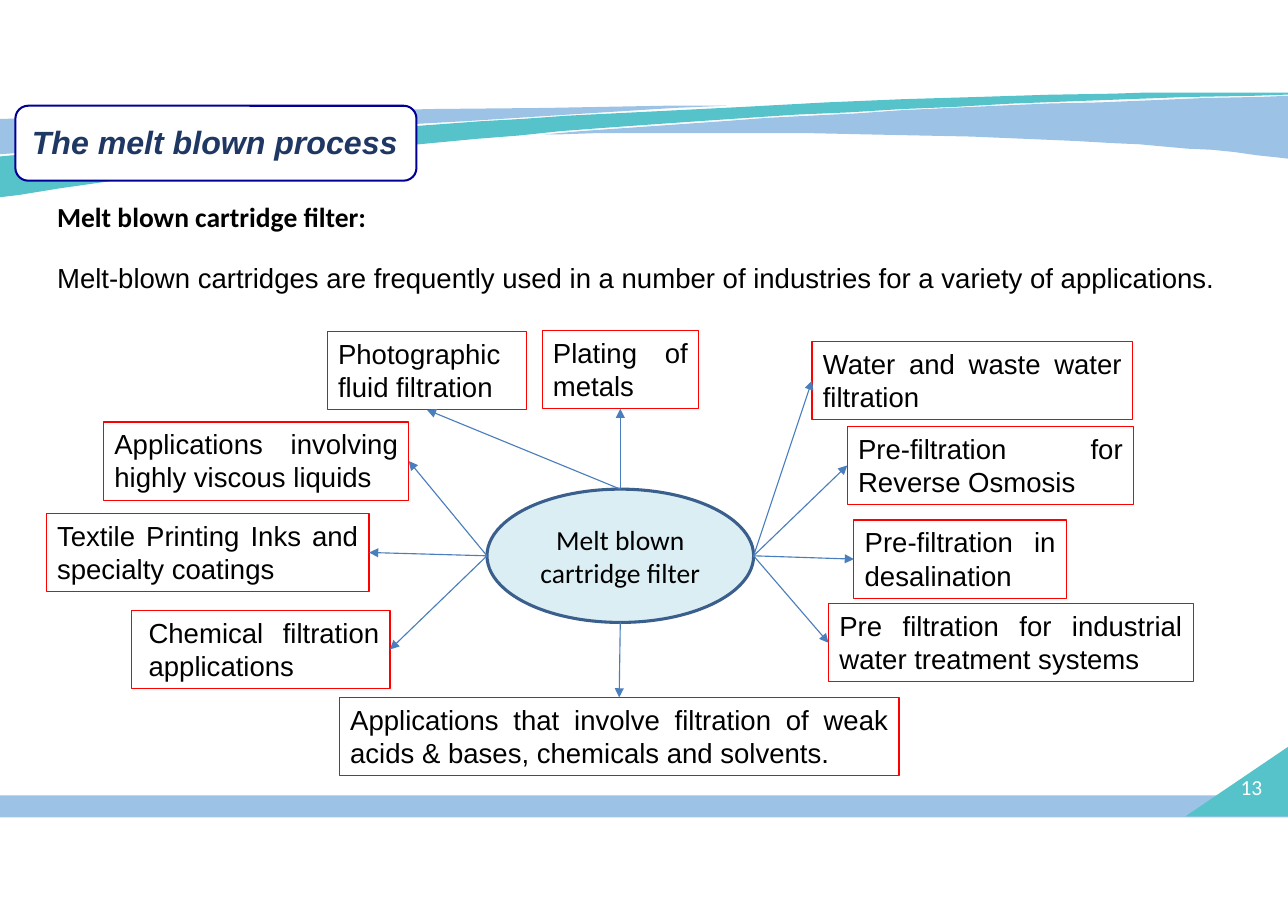
import pptx
import pptx.util
import pptx.dml.color
import pptx.enum.shapes
import pptx.enum.text
import pptx.oxml
import pptx.oxml.ns
import lxml.etree

Inches = pptx.util.Inches
Pt = pptx.util.Pt
RGBColor = pptx.dml.color.RGBColor
ShapeKind = pptx.enum.shapes.MSO_SHAPE
Align = pptx.enum.text.PP_ALIGN
Anchor = pptx.enum.text.MSO_ANCHOR

BLACK = RGBColor(0x00, 0x00, 0x00)
WHITE = RGBColor(0xFF, 0xFF, 0xFF)
RED = RGBColor(0xFF, 0x00, 0x00)
NAVY = RGBColor(0x1F, 0x37, 0x63)
BADGE_BLUE = RGBColor(0x00, 0x00, 0x94)
SKY = RGBColor(0x9C, 0xC3, 0xE6)
TEAL = RGBColor(0x56, 0xC3, 0xCA)
PALE_BLUE = RGBColor(0xDB, 0xEE, 0xF4)
HUB_LINE = RGBColor(0x3A, 0x5F, 0x8C)
ARROW_BLUE = RGBColor(0x4B, 0x7E, 0xBC)

# Connection sites of a rectangle
TOP, LEFT, BOTTOM, RIGHT = range(4)

LEFT_WAVE = [
    (6.6, 0.96), (6.04, 0.96), (4.96, 0.98), (3.94, 0.99), (2.99, 1.01), (2.12, 1.02),
    (1.36, 1.04), (0.42, 1.07), (0, 1.08), (0, 1.4), (0.29, 1.38), (0.93, 1.33),
    (1.67, 1.27), (2.47, 1.21), (3.33, 1.15), (4.23, 1.1), (5.17, 1.04), (6.12, 0.98)]
RIGHT_WAVE = [
    (11.69, 0.87), (11.44, 0.88), (10.94, 0.89), (10.46, 0.91), (9.98, 0.93),
    (9.52, 0.94), (9.06, 0.96), (8.62, 0.98), (8.19, 1), (7.77, 1.03), (7.36, 1.05),
    (6.96, 1.07), (6.57, 1.1), (6, 1.14), (5.28, 1.19), (4.94, 1.22), (5.08, 1.22),
    (5.38, 1.21), (6.11, 1.21), (6.94, 1.21), (7.39, 1.21), (7.86, 1.22), (8.33, 1.23),
    (8.81, 1.24), (9.29, 1.26), (9.76, 1.28), (10.11, 1.3), (10.34, 1.31),
    (10.56, 1.33), (10.78, 1.35), (11, 1.36), (11.2, 1.38), (11.41, 1.41),
    (11.6, 1.43), (11.69, 1.44)]
TEAL_WAVE = [
    (11.69, 0.86), (11.69, 0.84), (10.4, 0.84), (10.11, 0.85), (9.52, 0.86),
    (8.88, 0.88), (8.2, 0.9), (7.49, 0.93), (6.75, 0.97), (5.96, 1.01), (5.15, 1.05),
    (4.73, 1.08), (4.37, 1.1), (3.69, 1.15), (3.02, 1.19), (2.39, 1.24), (1.49, 1.3),
    (0.44, 1.38), (0, 1.42), (0, 1.79), (0.17, 1.77), (0.54, 1.71), (0.96, 1.65),
    (1.42, 1.58), (1.94, 1.51), (2.51, 1.45), (3.13, 1.38), (3.8, 1.31), (4.33, 1.26),
    (4.71, 1.23), (5.09, 1.19), (5.49, 1.16), (5.91, 1.13), (6.34, 1.1), (6.78, 1.07),
    (7.23, 1.04), (7.7, 1.02), (8.18, 0.99), (8.67, 0.97), (9.18, 0.94), (9.71, 0.92),
    (10.24, 0.9), (10.79, 0.88), (11.36, 0.87), (11.65, 0.86)]

# Text, left, top, width, side the arrow meets, left indent
APPLICATIONS = [
    ("Water and waste water filtration", 7.37, 3.1, 2.91, LEFT, 0),
    ("Pre-filtration for Reverse Osmosis", 7.69, 3.87, 2.6, LEFT, 0),
    ("Pre-filtration in desalination", 7.75, 4.72, 1.93, LEFT, 0),
    ("Pre filtration for industrial water treatment systems", 7.52, 5.48, 3.31, LEFT, 0),
    ("Plating of metals", 4.92, 3, 1.42, BOTTOM, 0),
    ("Photographic fluid filtration", 2.97, 3.01, 1.81, BOTTOM, 0),
    ("Chemical filtration applications", 1.19, 5.54, 2.35, RIGHT, 0.06),
    ("Textile Printing Inks and specialty coatings", 0.42, 4.66, 2.93, RIGHT, 0),
    ("Applications involving highly viscous liquids", 0.94, 3.83, 2.77, RIGHT, 0),
    ("Applications that involve filtration of weak acids & bases, chemicals and solvents.",
     3.08, 6.33, 5.08, TOP, 0)]
BOX_HEIGHT = 0.71


def write(box, text, font="Arial", size=18, color=BLACK, bold=False, italic=False,
          align=Align.LEFT, anchor=Anchor.TOP, inset=None, indent=0, spacing=None):
    frame = box.text_frame
    frame.word_wrap = True
    frame.vertical_anchor = anchor
    if inset is not None:
        frame.margin_left = frame.margin_right = Inches(inset)
        frame.margin_top = frame.margin_bottom = Inches(inset)
    para = frame.paragraphs[0]
    para.alignment = align
    if indent:
        properties = para._p.get_or_add_pPr()
        properties.set("marL", str(Inches(indent)))
        properties.set("indent", "0")
    if spacing:
        para.line_spacing = Pt(spacing)
    span = para.add_run()
    span.text = text
    span.font.name = font
    span.font.size = Pt(size)
    span.font.bold = bold
    span.font.italic = italic
    span.font.color.rgb = color


def style(shape, fill=None, line=None, weight=0.75):
    shape.shadow.inherit = False
    if fill is None:
        shape.fill.background()
    else:
        shape.fill.solid()
        shape.fill.fore_color.rgb = fill
    if line is None:
        shape.line.fill.background()
    else:
        shape.line.color.rgb = line
        shape.line.width = Pt(weight)


def add_box(page, kind, left, top, width, height, **look):
    box = page.shapes.add_shape(
        kind, Inches(left), Inches(top), Inches(width), Inches(height))
    style(box, **look)
    return box


def add_label(page, text, left, top, width, height, **text_format):
    label = page.shapes.add_textbox(
        Inches(left), Inches(top), Inches(width), Inches(height))
    write(label, text, **text_format)


def add_outline(page, fill, *contours):
    points = [[(Inches(x), Inches(y)) for x, y in contour] for contour in contours]
    builder = page.shapes.build_freeform(*points[0][0])
    builder.add_line_segments(points[0][1:], close=True)
    for contour in points[1:]:
        builder.move_to(*contour[0])
        builder.add_line_segments(contour[1:], close=True)
    style(builder.convert_to_shape(), fill=fill)


def add_arrow(page, hub, box, side):
    middle_x, middle_y = hub.left + hub.width // 2, hub.top + hub.height // 2
    starts = {TOP: (middle_x, hub.top + hub.height), BOTTOM: (middle_x, hub.top),
              LEFT: (hub.left + hub.width, middle_y), RIGHT: (hub.left, middle_y)}
    arrow = page.shapes.add_connector(
        pptx.enum.shapes.MSO_CONNECTOR.STRAIGHT, *starts[side], *starts[side])
    arrow.end_connect(box, side)
    arrow.line.color.rgb = ARROW_BLUE
    arrow.line.width = Pt(0.75)
    head = lxml.etree.SubElement(
        arrow.line._get_or_add_ln(), pptx.oxml.ns.qn("a:tailEnd"))
    head.set("type", "triangle")
    lxml.etree.SubElement(arrow._element.spPr, pptx.oxml.ns.qn("a:effectLst"))


def main():
    deck = pptx.Presentation()
    deck.slide_width, deck.slide_height = Inches(11.69), Inches(8.26)
    page = deck.slides.add_slide(deck.slide_layouts[6])

    # Footer band and header waves
    add_box(page, ShapeKind.RECTANGLE, 0, 7.22, 11.69, 0.2, fill=SKY)
    add_outline(page, TEAL, [(11.69, 7.41), (11.69, 6.78), (10.76, 7.41)])
    add_outline(page, SKY, LEFT_WAVE, RIGHT_WAVE)
    add_outline(page, TEAL, TEAL_WAVE)

    # Title badge and page number
    badge = add_box(page, ShapeKind.ROUNDED_RECTANGLE, 0.14, 0.96, 3.64, 0.68,
                    fill=WHITE, line=BADGE_BLUE, weight=1.32)
    badge.adjustments[0] = 0.17
    add_label(page, "The melt blown process", 0.2, 1.11, 3.5, 0.37, size=21, color=NAVY,
              bold=True, italic=True, align=Align.CENTER, inset=0)
    add_label(page, "13", 11.22, 7.06, 0.28, 0.22, font="Calibri", size=14,
              color=WHITE, inset=0, indent=0.04, spacing=14.3)

    # Introduction
    add_label(page, "Melt blown cartridge filter:", 0.42, 1.77, 10.8, 0.4,
              font="Calibri", bold=True)
    add_label(page, "Melt-blown cartridges are frequently used in a number of industries "
              "for a variety of applications.", 0.42, 2.32, 11.11, 0.4)

    # Hub with its applications
    hub = add_box(page, ShapeKind.OVAL, 4.42, 4.44, 2.42, 1.21,
                  fill=PALE_BLUE, line=HUB_LINE, weight=2)
    write(hub, "Melt blown cartridge filter", font="Calibri",
          align=Align.CENTER, anchor=Anchor.MIDDLE)
    for text, left, top, width, side, indent in APPLICATIONS:
        box = add_box(page, ShapeKind.RECTANGLE, left, top, width, BOX_HEIGHT, line=RED)
        write(box, text, align=Align.JUSTIFY, indent=indent)
        add_arrow(page, hub, box, side)

    deck.save("out.pptx")


if __name__ == "__main__":
    main()
